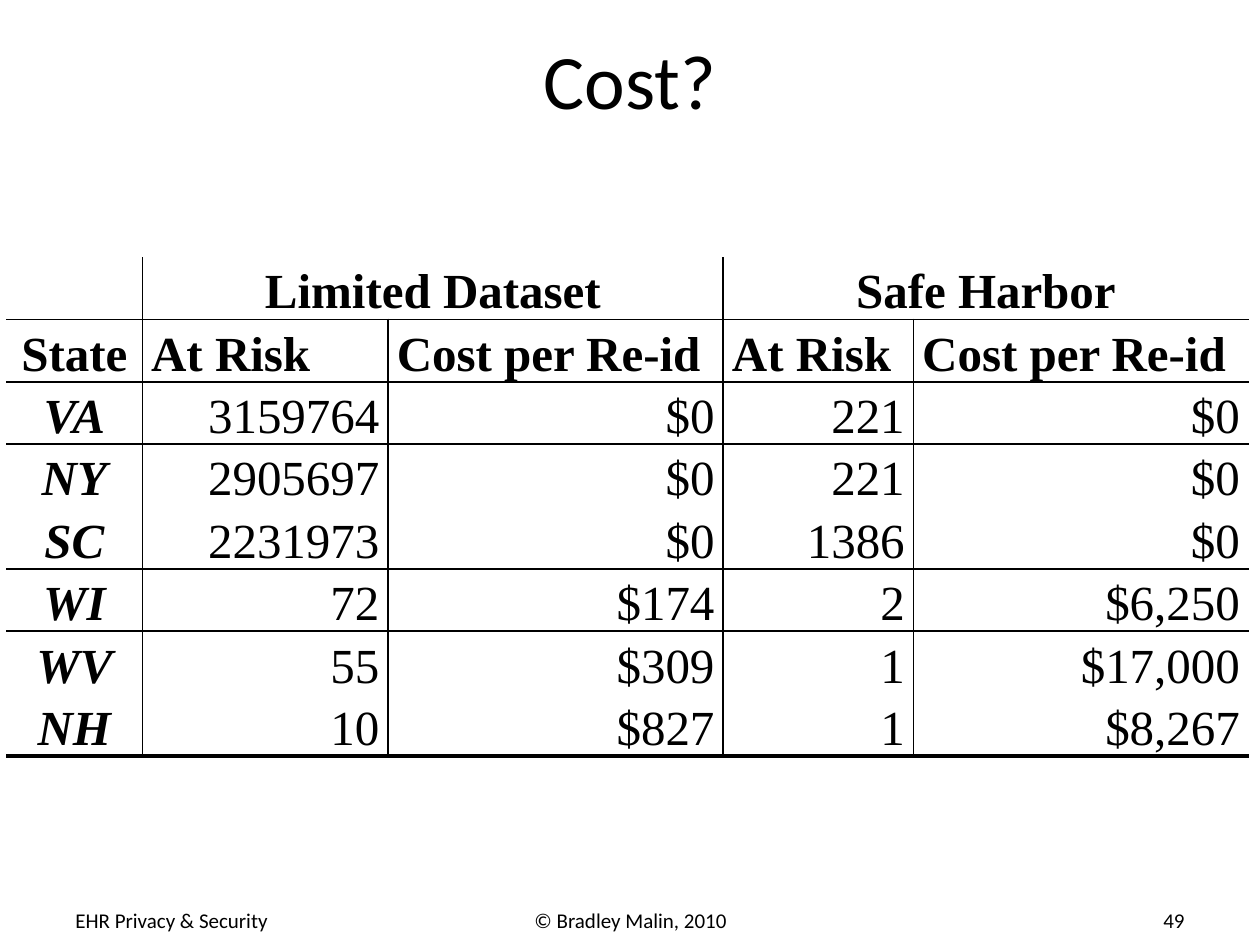
from dataclasses import dataclass
from lxml.etree import SubElement
from pptx import Presentation
from pptx.dml.color import RGBColor
from pptx.enum.text import MSO_ANCHOR, PP_ALIGN
from pptx.oxml.ns import qn
from pptx.util import Inches, Pt


@dataclass(frozen=True)
class Theme:
    ink: str = "000000"
    sans: str = "Calibri"
    serif: str = "Times New Roman"
    title: int = 44
    body: int = 28
    foot: int = 12
    thin: float = 1
    thick: float = 2.5
    plain: str = "{2D5ABB26-0587-4C30-8999-92F81FD0307C}"


class Deck:
    def __init__(self, theme):
        self.theme = theme
        self.show = Presentation()
        self.show.slide_width = Inches(10)
        self.show.slide_height = Inches(7.5)
        self.slide = self.show.slides.add_slide(self.show.slide_layouts[5])

    def label(self, frame, text, face, size, align, bold=False, slant=False):
        frame.word_wrap = True
        frame.text = text
        line = frame.paragraphs[0]
        line.alignment = align
        font = line.font
        font.name, font.size = face, Pt(size)
        font.bold, font.italic = bold, slant
        font.color.rgb = RGBColor.from_string(self.theme.ink)
        return line

    def place(self, shape, left, top, width, height):
        shape.left, shape.top = Inches(left), Inches(top)
        shape.width, shape.height = Inches(width), Inches(height)

    def title(self, text, *box):
        shape = self.slide.shapes.title
        self.place(shape, *box)
        shape.text_frame.vertical_anchor = MSO_ANCHOR.MIDDLE
        self.label(shape.text_frame, text, self.theme.sans, self.theme.title, PP_ALIGN.CENTER)

    def footer(self, text, left, width, align):
        shape = self.slide.shapes.add_textbox(
            Inches(left), Inches(7.1), Inches(width), Inches(0.4))
        shape.text_frame.vertical_anchor = MSO_ANCHOR.MIDDLE
        self.label(shape.text_frame, text, self.theme.sans, self.theme.foot, align)

    def rule(self, cell, sides):
        props = cell._tc.get_or_add_tcPr()
        for side in "LRTB":
            if side in sides:
                edge = SubElement(props, qn("a:ln" + side), w=str(Pt(sides[side])))
                fill = SubElement(edge, qn("a:solidFill"))
                SubElement(fill, qn("a:srgbClr"), val=self.theme.ink)

    def table(self, rows, widths, left, top, height):
        shape = self.slide.shapes.add_table(
            len(rows), len(widths), Inches(left), Inches(top),
            Inches(sum(widths)), Inches(height * len(rows)))
        grid = shape.table
        grid.first_row = grid.horz_banding = False
        grid._tbl.tblPr.find(qn("a:tableStyleId")).text = self.theme.plain
        for col, width in zip(grid.columns, widths):
            col.width = Inches(width)
        for row in grid.rows:
            row.height = Inches(height)
        for start in (1, 3):
            grid.cell(0, start).merge(grid.cell(0, start + 1))
        thin, thick = self.theme.thin, self.theme.thick
        below = {0: thin, 1: thin, 4: thin, 7: thick}
        for r, row in enumerate(rows):
            for c, text in enumerate(row):
                cell = grid.cell(r, c)
                sides = {}
                if c in (0, 2):
                    sides["R"] = thin
                if c in (1, 3):
                    sides["L"] = thin
                if r - 1 in below:
                    sides["T"] = below[r - 1]
                if r in below:
                    sides["B"] = below[r]
                self.rule(cell, sides)
                cell.fill.background()
                cell.margin_left = cell.margin_right = Inches(0.07)
                cell.margin_top = cell.margin_bottom = 0
                head = r < 2
                cell.vertical_anchor = MSO_ANCHOR.MIDDLE if head else MSO_ANCHOR.BOTTOM
                if not text:
                    continue
                if r == 0 or c == 0:
                    align = PP_ALIGN.CENTER
                else:
                    align = PP_ALIGN.LEFT if head else PP_ALIGN.RIGHT
                line = self.label(cell.text_frame, text, self.theme.serif, self.theme.body,
                                  align, head or c == 0, c == 0 and not head)
                line.line_spacing = 1.15

    def save(self):
        self.show.save("out.pptx")


def main():
    rows = [
        ("", "Limited Dataset", "", "Safe Harbor", ""),
        ("State", "At Risk", "Cost per Re-id", "At Risk", "Cost per Re-id"),
        ("VA", "3159764", "$0", "221", "$0"),
        ("NY", "2905697", "$0", "221", "$0"),
        ("SC", "2231973", "$0", "1386", "$0"),
        ("WI", "72", "$174", "2", "$6,250"),
        ("WV", "55", "$309", "1", "$17,000"),
        ("NH", "10", "$827", "1", "$8,267"),
    ]
    deck = Deck(Theme())
    deck.title("Cost?", 0.5, 0, 9, 1.25)
    deck.table(rows, (1.08, 1.95, 2.66, 1.51, 2.66), 0.05, 2.04, 0.49)
    deck.footer("EHR Privacy & Security", 0.5, 2.33, PP_ALIGN.LEFT)
    deck.footer("© Bradley Malin, 2010", 3.42, 3.17, PP_ALIGN.CENTER)
    deck.footer("49", 7.17, 2.33, PP_ALIGN.RIGHT)
    deck.save()


if __name__ == "__main__":
    main()
